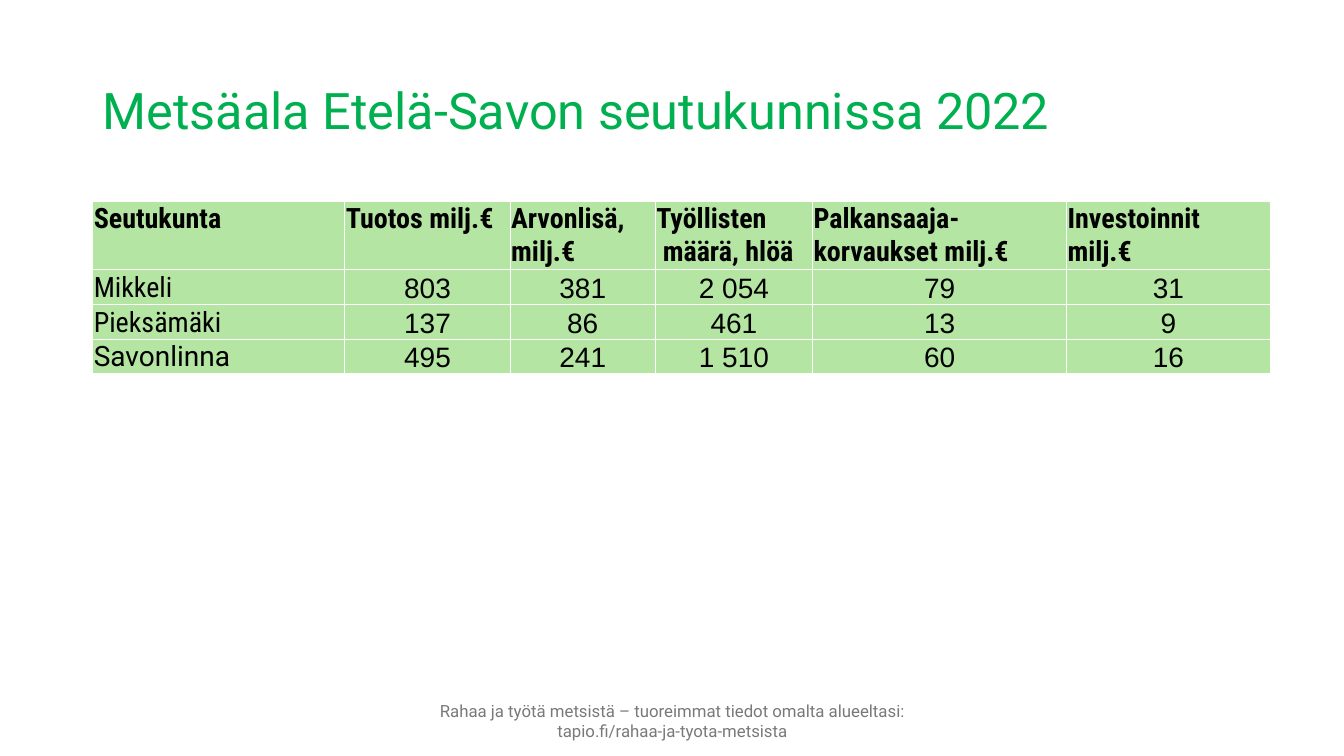
"""Build the slide on the forest sector in the sub-regions of Etelä-Savo."""
from dataclasses import dataclass

from lxml.etree import SubElement
from pptx import Presentation
from pptx.dml.color import RGBColor
from pptx.enum.text import MSO_ANCHOR, PP_ALIGN
from pptx.oxml.ns import qn
from pptx.util import Inches, Pt

GREEN = RGBColor(0x00, 0xB0, 0x50)
GREY = RGBColor(0x79, 0x79, 0x79)
BLACK = RGBColor(0x00, 0x00, 0x00)
WHITE = RGBColor(0xFF, 0xFF, 0xFF)
LIGHT_GREEN = RGBColor(0xB4, 0xE5, 0xA2)

CONDENSED = "Roboto Condensed"
COLUMN_WIDTHS = (2.5, 1.64, 1.44, 1.56, 2.52, 2.02)
HEADER_HEIGHT = 0.65
ROW_HEIGHT = 0.33
HEADINGS = (
    "Seutukunta",
    "Tuotos milj.€",
    "Arvonlisä, milj.€",
    "Työllisten\n määrä, hlöä",
    "Palkansaaja-korvaukset milj.€",
    "Investoinnit\nmilj.€",
)


@dataclass(frozen=True)
class TextStyle:
    font: str
    size: int
    color: RGBColor = BLACK
    bold: bool = False
    alignment: PP_ALIGN = PP_ALIGN.LEFT
    line_spacing: float = 1.0


@dataclass(frozen=True)
class Label:
    text: str
    left: float
    top: float
    width: float
    height: float
    style: TextStyle


@dataclass(frozen=True)
class Region:
    name: str
    font: str
    values: tuple[str, ...]


LABELS = (
    Label("Metsäala Etelä-Savon seutukunnissa 2022", 0.92, 0.4, 11.5, 1.45,
          TextStyle("Roboto", 36, GREEN, line_spacing=0.9)),
    Label("Rahaa ja työtä metsistä – tuoreimmat tiedot omalta alueeltasi: "
          "tapio.fi/rahaa-ja-tyota-metsista", 4.26, 6.95, 4.82, 0.4,
          TextStyle("Roboto", 12, GREY, alignment=PP_ALIGN.CENTER)),
)
REGIONS = (
    Region("Mikkeli", CONDENSED, ("803", "381", "2 054", "79", "31")),
    Region("Pieksämäki", CONDENSED, ("137", "86", "461", "13", "9")),
    Region("Savonlinna", "Roboto", ("495", "241", "1 510", "60", "16")),
)
HEADING_STYLE = TextStyle(CONDENSED, 20, bold=True)
VALUE_STYLE = TextStyle("Arial", 20, alignment=PP_ALIGN.CENTER)


def set_attributes(target, values: dict) -> None:
    """Set every named attribute on the target."""
    for name, value in values.items():
        setattr(target, name, value)


def write_text(text_frame, text: str, style: TextStyle) -> None:
    """Fill a text frame, one paragraph for each line."""
    text_frame.text = text
    for paragraph in text_frame.paragraphs:
        set_attributes(paragraph, {"alignment": style.alignment,
                                   "line_spacing": style.line_spacing})
        for run in paragraph.runs:
            set_attributes(run.font, {"name": style.font, "size": Pt(style.size),
                                      "bold": style.bold})
            run.font.color.rgb = style.color


def add_label(slide, label: Label) -> None:
    """Add a wrapped, vertically centred text box."""
    shape = slide.shapes.add_textbox(Inches(label.left), Inches(label.top),
                                     Inches(label.width), Inches(label.height))
    set_attributes(shape.text_frame, {"word_wrap": True,
                                      "vertical_anchor": MSO_ANCHOR.MIDDLE})
    write_text(shape.text_frame, label.text, label.style)


def add_borders(cell) -> None:
    """Draw thin white lines on all sides of a cell."""
    properties = cell._tc.get_or_add_tcPr()
    for side in ("a:lnL", "a:lnR", "a:lnT", "a:lnB"):
        line = SubElement(properties, qn(side), w=str(Pt(1)))
        fill = SubElement(line, qn("a:solidFill"))
        SubElement(fill, qn("a:srgbClr"), val=str(WHITE))


def fill_cell(cell, text: str, style: TextStyle, anchor: MSO_ANCHOR) -> None:
    """Write and format one table cell."""
    inset = Inches(0 if style is VALUE_STYLE else 0.01)
    set_attributes(cell, {"margin_left": inset, "margin_right": inset,
                          "margin_top": inset, "margin_bottom": 0,
                          "vertical_anchor": anchor})
    add_borders(cell)
    cell.fill.solid()
    cell.fill.fore_color.rgb = LIGHT_GREEN
    write_text(cell.text_frame, text, style)


def add_region_table(slide) -> None:
    """Add the table of headings and regions."""
    heights = (HEADER_HEIGHT,) + (ROW_HEIGHT,) * len(REGIONS)
    table = slide.shapes.add_table(
        len(heights), len(COLUMN_WIDTHS), Inches(0.92), Inches(2),
        Inches(sum(COLUMN_WIDTHS)), Inches(sum(heights))).table
    for column, width in zip(table.columns, COLUMN_WIDTHS):
        column.width = Inches(width)
    for row, height in zip(table.rows, heights):
        row.height = Inches(height)
    for column_index, heading in enumerate(HEADINGS):
        fill_cell(table.cell(0, column_index), heading, HEADING_STYLE, MSO_ANCHOR.TOP)
    for row_index, region in enumerate(REGIONS, start=1):
        fill_cell(table.cell(row_index, 0), region.name,
                  TextStyle(region.font, 20), MSO_ANCHOR.BOTTOM)
        for column_index, value in enumerate(region.values, start=1):
            fill_cell(table.cell(row_index, column_index), value,
                      VALUE_STYLE, MSO_ANCHOR.BOTTOM)


def main() -> None:
    """Create and save the presentation."""
    presentation = Presentation()
    set_attributes(presentation, {"slide_width": Inches(13.33),
                                  "slide_height": Inches(7.5)})
    slide = presentation.slides.add_slide(presentation.slide_layouts[6])
    for label in LABELS:
        add_label(slide, label)
    add_region_table(slide)
    presentation.save("out.pptx")


if __name__ == "__main__":
    main()
